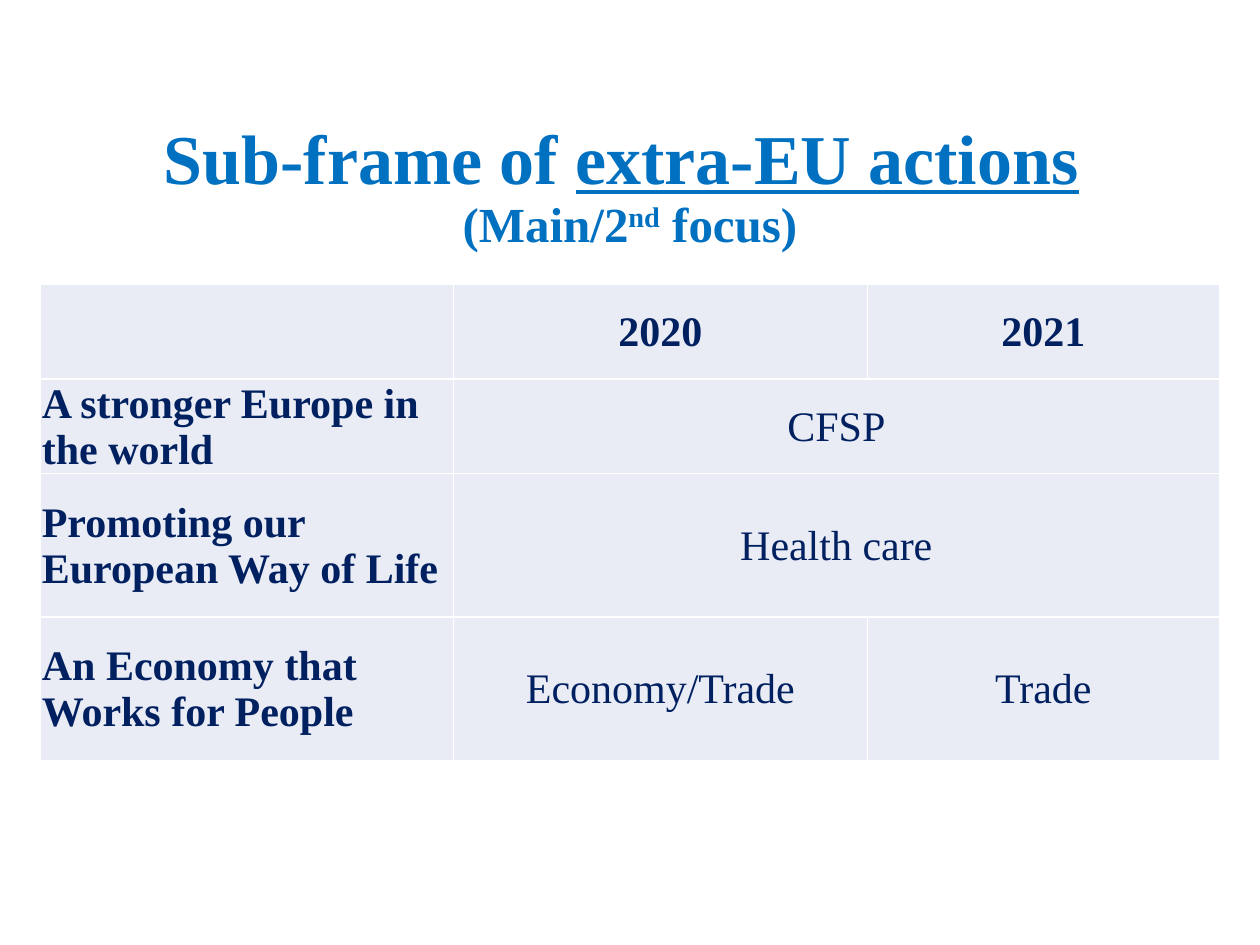
from copy import deepcopy

from lxml.etree import SubElement
from pptx import Presentation
from pptx.dml.color import RGBColor
from pptx.enum.text import MSO_ANCHOR, MSO_AUTO_SIZE, PP_ALIGN
from pptx.oxml.ns import qn
from pptx.util import Pt

BLUE = RGBColor(0x00, 0x70, 0xC0)
NAVY = RGBColor(0x00, 0x20, 0x60)
PALE = RGBColor(0xE9, 0xEB, 0xF5)
WHITE = RGBColor(0xFF, 0xFF, 0xFF)


def add_text(paragraph, text, font="Times New Roman", size=24, color=NAVY,
             bold=False, underline=False, baseline=0):
    run = paragraph.add_run()
    run.text = text
    run.font.name = font
    run.font.size = Pt(size)
    run.font.color.rgb = color
    run.font.bold = bold
    run.font.underline = underline
    if baseline:
        run.font._element.set("baseline", str(baseline * 1000))
    return run


class SlideBuilder:
    def __init__(self, slide, left, width):
        self.slide = slide
        self.left = Pt(left)
        self.width = Pt(width)

    def title(self, top, height, lines):
        heading = self.slide.shapes.title
        heading.left, heading.top = self.left, Pt(top)
        heading.width, heading.height = self.width, Pt(height)
        frame = heading.text_frame
        frame.word_wrap = True
        frame.auto_size = MSO_AUTO_SIZE.NONE
        frame.vertical_anchor = MSO_ANCHOR.MIDDLE
        paragraph = frame.paragraphs[0]
        paragraph.alignment = PP_ALIGN.CENTER
        paragraph.line_spacing = 0.9
        last = None
        for parts in lines:
            if last is not None:
                paragraph.add_line_break()
                line_break = paragraph._p.findall(qn("a:br"))[-1]
                line_break.append(deepcopy(last.font._element))
            for text, style in parts:
                last = add_text(paragraph, text, color=BLUE, bold=True, **style)

    def border(self, cell):
        properties = cell._tc.get_or_add_tcPr()
        for side in ("a:lnL", "a:lnR", "a:lnT", "a:lnB"):
            line = SubElement(properties, qn(side), w=str(Pt(1)))
            fill = SubElement(line, qn("a:solidFill"))
            SubElement(fill, qn("a:srgbClr"), val=str(WHITE))

    def cell(self, cell, text, bold, alignment, anchor):
        self.border(cell)
        cell.fill.solid()
        cell.fill.fore_color.rgb = PALE
        cell.margin_left = cell.margin_right = cell.margin_top = Pt(0.75)
        cell.margin_bottom = Pt(0)
        cell.vertical_anchor = anchor
        paragraph = cell.text_frame.paragraphs[0]
        paragraph.alignment = alignment
        if text:
            add_text(paragraph, text, bold=bold)

    def table(self, top, column_widths, row_heights, rows):
        frame = self.slide.shapes.add_table(
            len(rows), len(column_widths), self.left, Pt(top),
            self.width, Pt(sum(row_heights)))
        grid = frame.table
        grid.first_row = grid.horz_banding = False
        for column, width in zip(grid.columns, column_widths):
            column.width = Pt(width)
        for row, height in zip(grid.rows, row_heights):
            row.height = Pt(height)
        for r, texts in enumerate(rows):
            for c, text in enumerate(texts):
                self.cell(
                    grid.cell(r, c), text, bold=r == 0 or c == 0,
                    alignment=PP_ALIGN.CENTER if c else PP_ALIGN.LEFT,
                    anchor=MSO_ANCHOR.BOTTOM if (r, c) == (1, 0) else MSO_ANCHOR.MIDDLE)
            if texts[-1] is None:
                grid.cell(r, 1).merge(grid.cell(r, 2))


def main():
    presentation = Presentation()
    presentation.slide_width, presentation.slide_height = Pt(720), Pt(540)
    slide = presentation.slides.add_slide(presentation.slide_layouts[5])
    builder = SlideBuilder(slide, left=23.2, width=673.6)
    builder.title(62, 91.5, [
        [("Sub-frame of ", {"size": 40}),
         ("extra-EU actions", {"size": 40, "underline": True}),
         (" ", {"size": 40})],
        [("(Main/2", {"size": 28}),
         ("nd", {"size": 28, "baseline": 30}),
         (" focus)", {"size": 28})],
    ])
    builder.table(162.7, [235.9, 236.6, 201.1], [54, 54, 82, 82], [
        ["", "2020", "2021"],
        ["A stronger Europe in the world", "CFSP", None],
        ["Promoting our European Way of Life", "Health care", None],
        ["An Economy that Works for People", "Economy/Trade", "Trade"],
    ])
    presentation.save("out.pptx")


if __name__ == "__main__":
    main()
